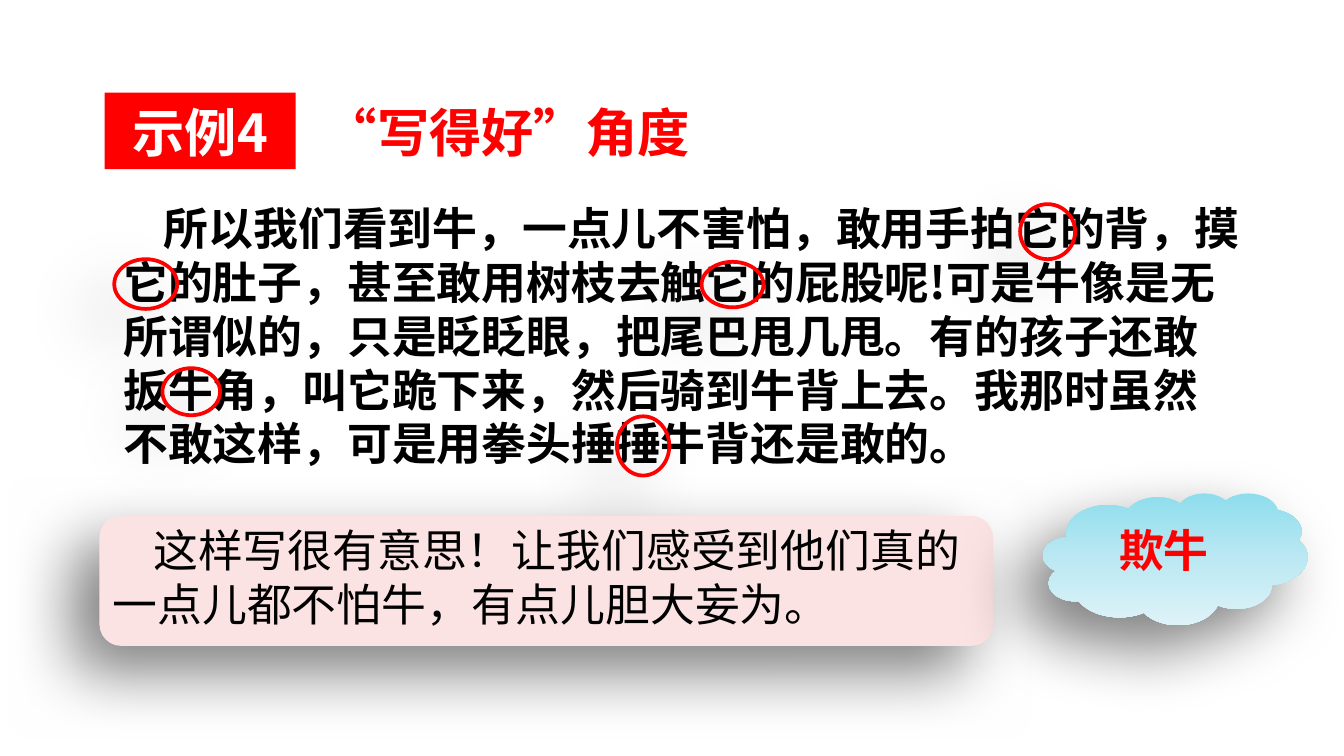
import copy

import lxml.etree
import pptx
import pptx.dml.color
import pptx.enum.shapes
import pptx.enum.text
import pptx.oxml
import pptx.oxml.ns
import pptx.util

Cm = pptx.util.Cm
Pt = pptx.util.Pt
Shapes = pptx.enum.shapes.MSO_SHAPE
Align = pptx.enum.text.PP_ALIGN
FONT = "Noto Sans CJK SC"
RED = "FF0000"
BLACK = "000000"
WHITE = "FFFFFF"
PASSAGE = (
    "所以我们看到牛，一点儿不害怕，敢用手拍它的背，摸它的肚子，甚至敢用树枝去触它的屁股呢!"
    "可是牛像是无所谓似的，只是眨眨眼，把尾巴甩几甩。有的孩子还敢扳牛角，叫它跪下来，"
    "然后骑到牛背上去。我那时虽然不敢这样，可是用拳头捶捶牛背还是敢的。"
)
COMMENT = "这样写很有意思！让我们感受到他们真的一点儿都不怕牛，有点儿胆大妄为。"
CIRCLED_WORDS = [
    (11.18, 1.29, 1.17, 0.86),
    (0.08, 1.24, 1.19, 0.94),
    (17.2, 0.2, 1.04, 1.04),
    (0.99, 3.3, 1.09, 0.89),
    (9.58, 4.21, 0.99, 1.12),
]


def color(value):
    """Turn a hex string into a colour."""
    return pptx.dml.color.RGBColor.from_string(value)


def lengths(box):
    """Turn left, top, width and height in centimetres into lengths."""
    return [Cm(value) for value in box]


def add_shadow(shape):
    """Give the shape a soft shadow towards the lower left."""
    shape.shadow.inherit = False
    effects = shape._element.spPr.find(pptx.oxml.ns.qn("a:effectLst"))
    effects.append(pptx.oxml.parse_xml(
        f'<a:outerShdw {pptx.oxml.ns.nsdecls("a")} blurRad="{Pt(35)}" dist="{Pt(20)}" '
        'dir="8100000" algn="ctr" rotWithShape="0"><a:srgbClr val="000000">'
        '<a:alpha val="50000"/></a:srgbClr></a:outerShdw>'))


def add_shape(shapes, kind, box, fill=None):
    """Add a preset shape without outline or shadow."""
    shape = shapes.add_shape(kind, *lengths(box))
    shape.shadow.inherit = False
    shape.line.fill.background()
    if fill:
        shape.fill.solid()
        shape.fill.fore_color.rgb = color(fill)
    else:
        shape.fill.background()
    return shape


def write(shape, text, size, text_color, bold=True, indent=0, wrap=True, align=Align.LEFT):
    """Write one paragraph with tight lines into a shape."""
    frame = shape.text_frame
    frame.word_wrap = wrap
    frame.margin_top = Cm(0.14)
    frame.margin_bottom = Cm(0)
    frame.vertical_anchor = pptx.enum.text.MSO_ANCHOR.TOP
    paragraph = frame.paragraphs[0]
    paragraph.alignment = align
    paragraph.line_spacing = Pt(size * 1.2)
    paragraph._p.get_or_add_pPr().set("indent", str(Cm(indent)))
    run = paragraph.add_run()
    run.text = text
    run.font.size = Pt(size)
    run.font.bold = bold
    run.font.color.rgb = color(text_color)
    run.font.name = FONT
    east_asian = lxml.etree.SubElement(run.font._element, pptx.oxml.ns.qn("a:ea"))
    east_asian.set("typeface", FONT)


def add_heading(slide, box):
    """Place the red label and the title beside it."""
    left, top, width, height = box
    label = add_shape(slide.shapes, Shapes.RECTANGLE, (left, top, 3.61, height), RED)
    write(label, "示例4", 28, WHITE, align=Align.CENTER)
    title = slide.shapes.add_textbox(*lengths((left + 3.91, top, width - 3.91, height)))
    write(title, "“写得好”角度", 28, RED)


def add_passage(slide, box):
    """Place the passage and circle its key words."""
    left, top, width, height = box
    passage = slide.shapes.add_textbox(*lengths(box))
    write(passage, PASSAGE, 24, BLACK, indent=0.77)
    for x, y, circle_width, circle_height in CIRCLED_WORDS:
        circle = add_shape(slide.shapes, Shapes.OVAL,
                           (left + x, top + y, circle_width, circle_height))
        circle.line.color.rgb = color(RED)
        circle.line.width = Pt(2)
        add_shadow(circle)


def add_comment(slide, box):
    """Place the pink panel with the comment."""
    left, top, width, height = box
    group = slide.shapes.add_group_shape()
    panel = add_shape(group.shapes, Shapes.ROUNDED_RECTANGLE, box, "FCE3E3")
    add_shadow(panel)
    comment = group.shapes.add_textbox(*lengths((left, top, width - 0.08, height - 0.15)))
    write(comment, COMMENT, 24, BLACK, bold=False, indent=0.77)


def add_cloud(slide, box):
    """Place the shaded cloud with its key phrase."""
    left, top, width, height = box
    group = slide.shapes.add_group_shape()
    cloud = add_shape(group.shapes, Shapes.CLOUD, box)
    cloud.fill.gradient()
    cloud.fill.gradient_angle = 270
    stop_list = cloud._element.spPr.find(".//" + pptx.oxml.ns.qn("a:gsLst"))
    stop_list.insert(1, copy.deepcopy(stop_list[0]))
    stops = zip(cloud.fill.gradient_stops, (0, 0.5, 1), ("8EDDED", "BBE8F2", "DEF3F8"))
    for stop, position, stop_color in stops:
        stop.position = position
        stop.color.rgb = color(stop_color)
    add_shadow(cloud)
    phrase = group.shapes.add_textbox(*lengths((left + 1.19, top + 0.43, 2.24, 1.8)))
    write(phrase, "欺牛", 24, RED, wrap=False)


def main():
    """Build the slide and save it."""
    presentation = pptx.Presentation()
    presentation.slide_width = Cm(25.4)
    presentation.slide_height = Cm(14.29)
    slide = presentation.slides.add_slide(presentation.slide_layouts[6])
    slide.background.fill.solid()
    slide.background.fill.fore_color.rgb = color(WHITE)
    add_heading(slide, (1.98, 1.75, 11.71, 1.45))
    add_passage(slide, (2.08, 3.66, 21.63, 5.56))
    add_comment(slide, (1.88, 9.75, 16.89, 2.46))
    add_cloud(slide, (19.71, 9.32, 5, 2.49))
    presentation.save("out.pptx")


if __name__ == "__main__":
    main()
